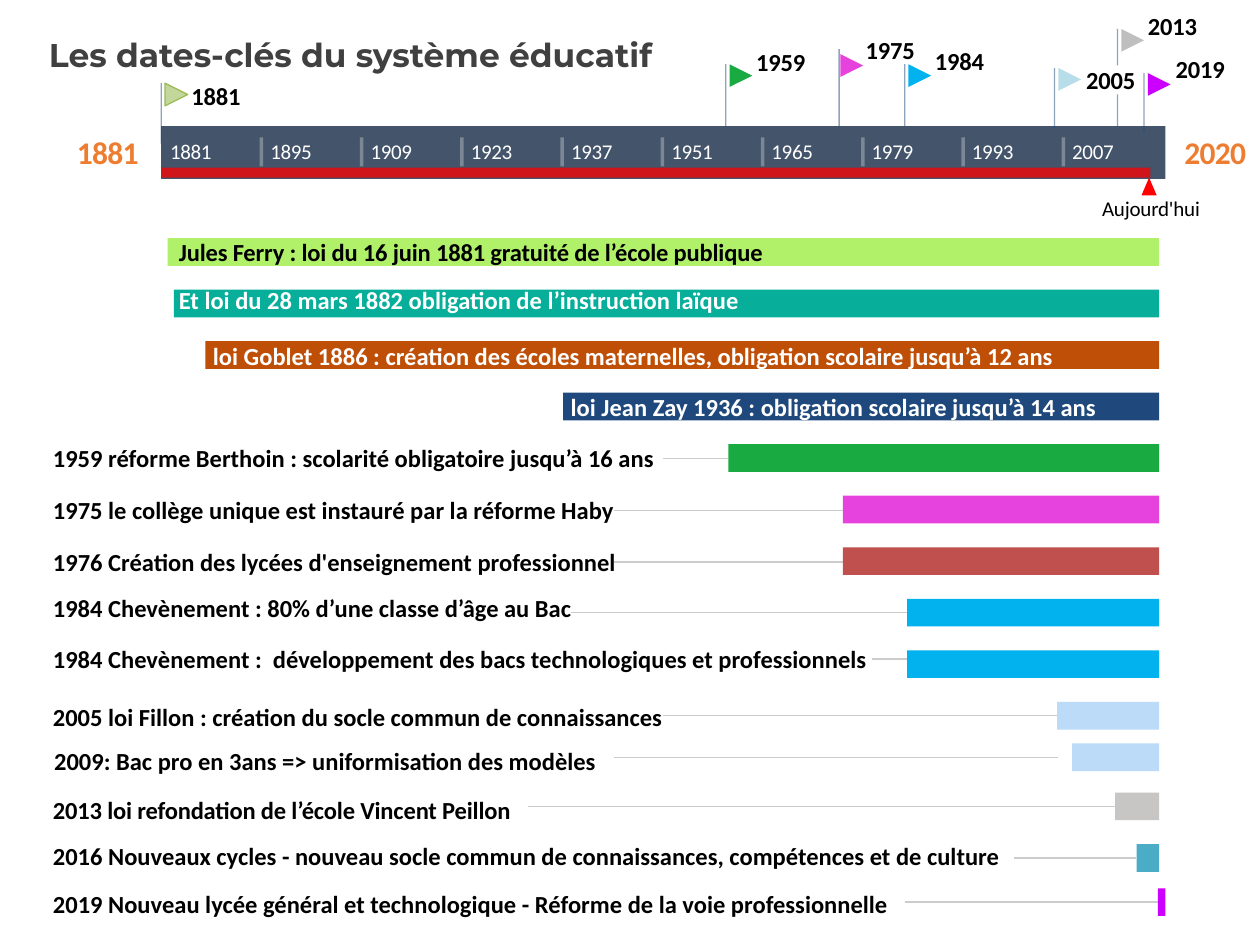
from lxml.etree import SubElement
from pptx import Presentation
from pptx.dml.color import RGBColor
from pptx.enum.shapes import MSO_CONNECTOR, MSO_SHAPE
from pptx.enum.text import MSO_ANCHOR, PP_ALIGN
from pptx.oxml.ns import qn
from pptx.util import Inches, Pt

THEME = {
    "black": "000000", "white": "FFFFFF", "title": "404040", "orange": "ED7D31",
    "band": "44546A", "red": "FF0000", "pole": "1F497E", "leader": "CCCCCC",
    "lime": "B1F069", "teal": "07AE99", "rust": "BF4F07", "navy": "1F497D",
    "green": "1AAA42", "pink": "E642DD", "brick": "C0504D", "cyan": "02B2EE",
    "sky": "BBDBF8", "grey": "C8C5C5", "aqua": "4BACC6", "violet": "CC00FF",
    "olive": "C3D69B", "olive_edge": "9BBB59", "silver": "BFBFBF", "ice": "B7DEE8",
    "body_font": "Calibri", "title_font": "Montserrat",
    "title_size": 18.8, "end_size": 18, "label_size": 14, "tick_size": 12,
}

presentation = Presentation()
presentation.slide_width, presentation.slide_height = Inches(10), Inches(7.5)
slide = presentation.slides.add_slide(presentation.slide_layouts[6])


def draw_line(start, end, color, width=0.75, alpha=100):
    connector = slide.shapes.add_connector(
        MSO_CONNECTOR.STRAIGHT, *(Inches(value) for value in (*start, *end)))
    connector.line.width = Pt(width)
    connector.line.color.rgb = RGBColor.from_string(THEME[color])
    properties = connector._element.spPr
    for node in properties.iter(qn("a:srgbClr")):
        SubElement(node, qn("a:alpha"), val=str(alpha * 1000))
    SubElement(properties, qn("a:effectLst"))


def draw_box(box, fill=None, preset=MSO_SHAPE.RECTANGLE, rotation=0, edge=None, alpha=100,
             text="", color="black", size="label_size", font="body_font", bold=True,
             spacing=0, align=PP_ALIGN.LEFT, anchor=MSO_ANCHOR.MIDDLE, wrap=True,
             margins=(0, 0)):
    area = [Inches(value) for value in box]
    if fill:
        item = slide.shapes.add_shape(preset, *area)
        item.shadow.inherit = False
        item.rotation = rotation
        item.fill.solid()
        item.fill.fore_color.rgb = RGBColor.from_string(THEME[fill])
        for node in item._element.spPr.iter(qn("a:srgbClr")):
            SubElement(node, qn("a:alpha"), val=str(alpha * 1000))
        if edge:
            item.line.color.rgb = RGBColor.from_string(THEME[edge])
            item.line.width = Pt(0.75)
        else:
            item.line.fill.background()
    else:
        item = slide.shapes.add_textbox(*area)
    if not text:
        return
    side, vertical = (Inches(value) for value in margins)
    frame_format = {"margin_left": side, "margin_right": side, "margin_top": vertical,
                    "margin_bottom": vertical, "word_wrap": wrap, "vertical_anchor": anchor}
    for name, value in frame_format.items():
        setattr(item.text_frame, name, value)
    paragraph = item.text_frame.paragraphs[0]
    paragraph.alignment = align
    run = paragraph.add_run()
    run.text = text
    run_format = {"name": THEME[font], "size": Pt(THEME[size]), "bold": bold}
    for name, value in run_format.items():
        setattr(run.font, name, value)
    run.font.color.rgb = RGBColor.from_string(THEME[color])
    run._r.get_or_add_rPr().set("spc", str(round(spacing * 100)))


draw_box((0.09, 0.06, 5.39, 0.57), text="Les dates-clés du système éducatif", color="title",
         size="title_size", font="title_font", align=PP_ALIGN.CENTER,
         anchor=MSO_ANCHOR.BOTTOM, margins=(0.07, 0.04))

for year, left in (("1881", 0.61), ("2020", 9.4)):
    draw_box((left, 1.05, 0.49, 0.31), text=year, color="orange", size="end_size",
             spacing=-0.4, align=PP_ALIGN.CENTER, wrap=False)

draw_box((1.28, 1, 7.97, 0.42), "band")
draw_box((1.28, 1.33, 7.85, 0.08), "red", alpha=75)
draw_box((9.06, 1.41, 0.12, 0.14), "red", MSO_SHAPE.ISOSCELES_TRIANGLE)
draw_box((8.73, 1.55, 0.81, 0.2), text="Aujourd'hui", size="tick_size", bold=False,
         spacing=-0.1, align=PP_ALIGN.CENTER, wrap=False)

tick_gap = 7.16 / 9
for index, year in enumerate(range(1881, 2008, 14)):
    offset = index * tick_gap
    if index:
        draw_line((1.28 + offset, 1.09), (1.28 + offset, 1.32), "white", 2, 30)
    draw_box((1.35 + offset, 1.1, 0.33, 0.2), text=str(year), color="white",
             size="tick_size", bold=False, spacing=-0.2, wrap=False)

flags = [
    ("1959", (5.76, 0.51, 1), (5.79, 0.51), "green", None, (6, 0.39, 0.48, 0.2), None),
    ("1975", (6.66, 0.39, 1), (6.67, 0.43), "pink", None, (6.87, 0.3, 0.52, 0.19), None),
    ("1984", (7.18, 0.51, 1), (7.21, 0.51), "cyan", None, (7.42, 0.39, 0.63, 0.19), None),
    ("1881", (1.28, 0.66, 1.14), (1.31, 0.66), "olive", "olive_edge",
     (1.52, 0.66, 0.66, 0.2), None),
    ("2019", (9.08, 0.58, 1.06), (9.11, 0.58), "violet", None, (9.33, 0.45, 0.63, 0.19), None),
    ("2013", (8.87, 0.23, 1), (8.9, 0.23), "silver", None, (9.11, 0.11, 0.63, 0.19), None),
    ("2005", (8.37, 0.54, 1.02), (8.4, 0.54), "ice", None, (8.62, 0.52, 0.44, 0.23), "white"),
]
for year, (pole, top, bottom), corner, color, edge, label_box, backing in flags:
    draw_line((pole, top), (pole, bottom), "pole", alpha=50)
    draw_box((*corner, 0.18, 0.18), color, MSO_SHAPE.FLOWCHART_MERGE, 270, edge)
    draw_box(label_box, backing, text=year, spacing=-0.1)

reforms = [
    ("Jules Ferry : loi du 16 juin 1881 gratuité de l’école publique",
     (1.42, 1.91, 5.2, 0.17), "black", -0.1, 1.33, "lime", None),
    ("Et loi du 28 mars 1882 obligation de l’instruction laïque",
     (1.42, 2.26, 5.57, 0.24), "white", 0, 1.38, "teal", None),
    ("loi Goblet 1886 : création des écoles maternelles, obligation scolaire jusqu’à 12 ans",
     (1.69, 2.75, 6.99, 0.15), "white", 0, 1.63, "rust", None),
    ("loi Jean Zay 1936 : obligation scolaire jusqu’à 14 ans",
     (4.53, 3.14, 5.06, 0.17), "white", 0, 4.47, "navy", None),
    ("1959 réforme Berthoin : scolarité obligatoire jusqu’à 16 ans",
     (0.42, 3.55, 4.93, 0.17), "black", 0, 5.78, "green", (5.26, 5.78, 3.64)),
    ("1975 le collège unique est instauré par la réforme Haby",
     (0.42, 3.95, 5.92, 0.19), "black", 0, 6.69, "pink", (4.87, 6.69, 4.05)),
    ("1976 Création des lycées d'enseignement professionnel",
     (0.42, 4.36, 5.89, 0.19), "black", 0, 6.69, "brick", (4.87, 6.69, 4.46)),
    ("1984 Chevènement : 80% d’une classe d’âge au Bac",
     (0.42, 4.7, 5.73, 0.24), "black", 0, 7.2, "cyan", (4.53, 7.2, 4.86)),
    ("1984 Chevènement :  développement des bacs technologiques et professionnels",
     (0.42, 5.11, 6.5, 0.24), "black", 0, 7.2, "cyan", (6.92, 7.2, 5.23)),
    ("2005 loi Fillon : création du socle commun de connaissances",
     (0.42, 5.59, 6.06, 0.2), "black", 0, 8.39, "sky", (5.26, 8.39, 5.68)),
    ("2009: Bac pro en 3ans => uniformisation des modèles",
     (0.43, 5.92, 4.83, 0.23), "black", 0, 8.51, "sky", (4.87, 8.4, 6.01)),
    ("2013 loi refondation de l’école Vincent Peillon",
     (0.42, 6.31, 5.57, 0.24), "black", -0.1, 8.85, "grey", (4.19, 8.85, 6.4)),
    ("2016 Nouveaux cycles - nouveau socle commun de connaissances, compétences et de culture",
     (0.42, 6.72, 7.97, 0.15), "black", 0, 9.02, "aqua", (8.05, 9.02, 6.81)),
    ("2019 Nouveau lycée général et technologique - Réforme de la voie professionnelle",
     (0.42, 7.07, 8.11, 0.2), "black", 0, 9.19, "violet", (7.18, 9.19, 7.16)),
]
bar_tops = [1.89 + index * 3.68 / 9 for index in range(10)] + [5.9, 6.29, 6.7, 7.05]
bar_ends = [9.2] * 13 + [9.25]
for reform, top, end in zip(reforms, bar_tops, bar_ends):
    label, label_box, label_color, spacing, start, bar_color, leader = reform
    if leader:
        leader_start, leader_end, height = leader
        draw_line((leader_start, height), (leader_end, height), "leader")
    draw_box((start, top, end - start, 0.22), bar_color)
    draw_box(label_box, text=label, color=label_color, spacing=spacing)

presentation.save("out.pptx")
